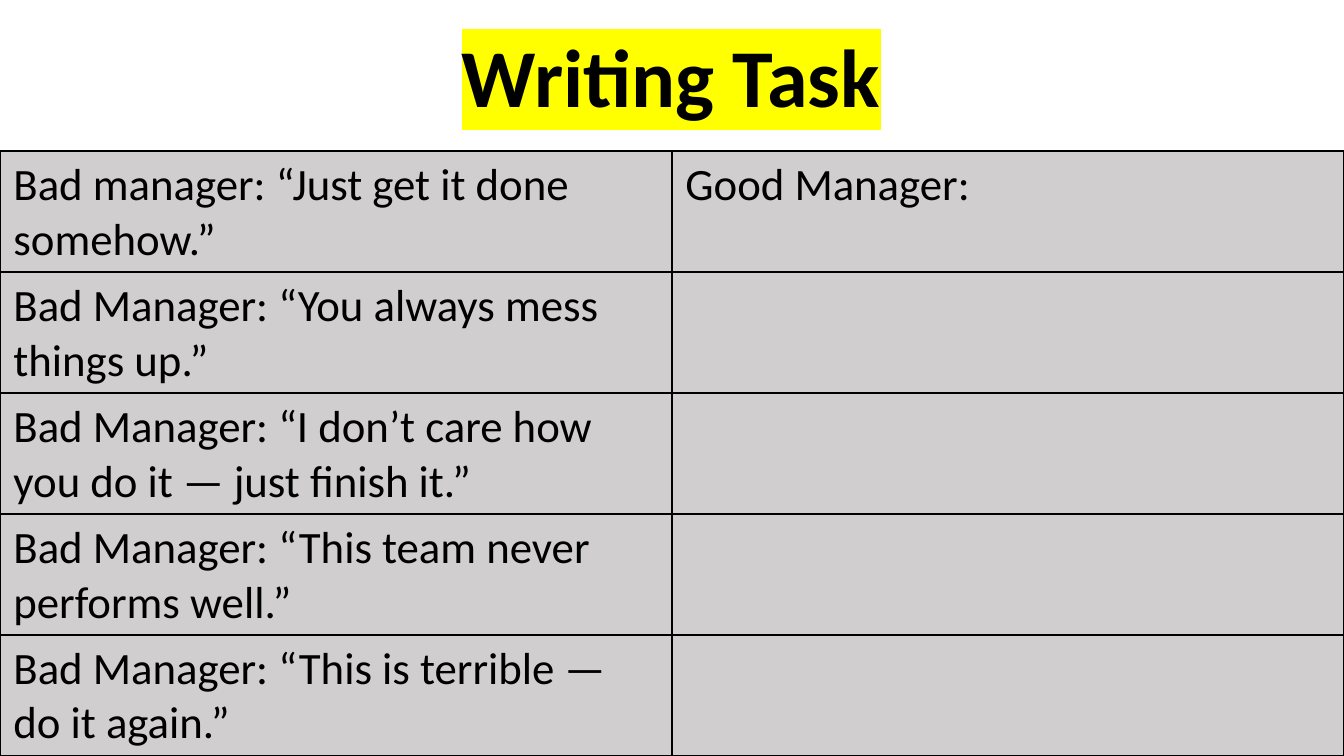
from lxml.etree import SubElement
from pptx import Presentation
from pptx.dml.color import RGBColor
from pptx.enum.text import MSO_ANCHOR, MSO_AUTO_SIZE, PP_ALIGN
from pptx.oxml.ns import qn
from pptx.util import Inches, Pt

COLORS = {"text": "000000", "border": "000000", "cell": "D0CECE", "highlight": "FFFF00"}
FONT = "Calibri"
ROWS = [
    ("Bad manager: “Just get it done somehow.”", "Good Manager:"),
    ("Bad Manager: “You always mess things up.”", ""),
    ("Bad Manager: “I don’t care how you do it — just finish it.”", ""),
    ("Bad Manager: “This team never performs well.”", ""),
    ("Bad Manager: “This is terrible — do it again.”", ""),
]


def rgb(name):
    return RGBColor.from_string(COLORS[name])


def style_font(font, size, bold=False):
    font.size = Pt(size)
    font.bold = bold
    font.color.rgb = rgb("text")
    font.name = FONT


def highlight_run(r, color):
    rpr = r._r.get_or_add_rPr()
    highlight = SubElement(rpr, qn("a:highlight"))
    SubElement(highlight, qn("a:srgbClr"), val=COLORS[color])
    rpr.find(qn("a:solidFill")).addnext(highlight)


def add_title(s, text):
    sp = s.shapes.title
    sp.left, sp.top, sp.width, sp.height = map(Inches, (2.24, 0.14, 5.51, 0.84))
    tf = sp.text_frame
    tf.word_wrap = True
    tf.auto_size = MSO_AUTO_SIZE.SHAPE_TO_FIT_TEXT
    tf.vertical_anchor = MSO_ANCHOR.TOP
    p = tf.paragraphs[0]
    p.alignment = PP_ALIGN.CENTER
    r = p.add_run()
    r.text = text
    style_font(r.font, 44, bold=True)
    highlight_run(r, "highlight")


def set_borders(cell, color, width):
    tcpr = cell._tc.get_or_add_tcPr()
    for i, side in enumerate(("a:lnL", "a:lnR", "a:lnT", "a:lnB")):
        ln = SubElement(tcpr, qn(side), w=str(Pt(width)))
        fill = SubElement(ln, qn("a:solidFill"))
        SubElement(fill, qn("a:srgbClr"), val=COLORS[color])
        tcpr.insert(i, ln)


def fill_cell(cell, text):
    cell.fill.solid()
    cell.fill.fore_color.rgb = rgb("cell")
    cell.margin_bottom = Inches(0.03)
    set_borders(cell, "border", 1)
    cell.text = text
    style_font(cell.text_frame.paragraphs[0].font, 24)


def add_manager_table(s, rows, width, bottom):
    height = Inches(4.5)
    frame = s.shapes.add_table(len(rows), 2, Inches(0), bottom - height, width, height)
    table = frame.table
    for i, texts in enumerate(rows):
        for j, text in enumerate(texts):
            fill_cell(table.cell(i, j), text)


def main():
    prs = Presentation()
    prs.slide_width = Inches(10)
    prs.slide_height = prs.slide_width * 9 // 16
    s = prs.slides.add_slide(prs.slide_layouts[5])
    add_title(s, "Writing Task")
    add_manager_table(s, ROWS, prs.slide_width, prs.slide_height)
    prs.save("out.pptx")


if __name__ == "__main__":
    main()
